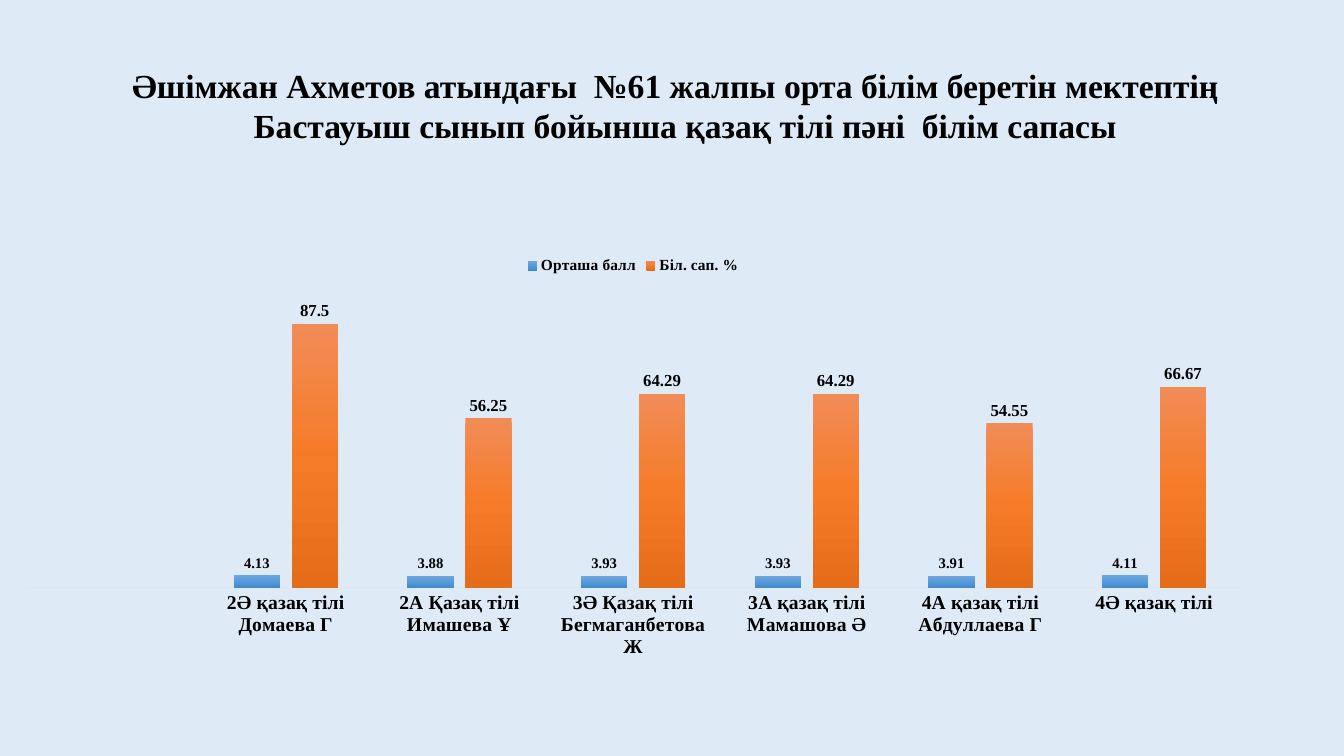
from pptx import Presentation
from pptx.chart.data import CategoryChartData
from pptx.dml.color import RGBColor
from pptx.enum.chart import XL_CHART_TYPE, XL_LABEL_POSITION, XL_LEGEND_POSITION, XL_TICK_MARK
from pptx.enum.text import MSO_ANCHOR, MSO_AUTO_SIZE, PP_ALIGN
from pptx.oxml import parse_xml
from pptx.oxml.ns import nsdecls, qn
from pptx.util import Inches, Pt

CLUSTERED = XL_CHART_TYPE.COLUMN_CLUSTERED
OUTSIDE_END = XL_LABEL_POSITION.OUTSIDE_END
LEGEND_TOP = XL_LEGEND_POSITION.TOP
NO_TICK = XL_TICK_MARK.NONE
LEFT, CENTER = PP_ALIGN.LEFT, PP_ALIGN.CENTER
TITLE_ONLY = 5

TITLE_LINES = [
    ("Әшімжан Ахметов атындағы  №61 жалпы орта білім беретін мектептің", LEFT),
    ("Бастауыш сынып бойынша қазақ тілі пәні  білім сапасы", CENTER),
]
CLASSES = ["", "2Ә қазақ тілі Домаева Г", "2А Қазақ тілі Имашева Ұ",
           "3Ә Қазақ тілі Бегмаганбетова Ж", "3А қазақ тілі Мамашова Ә",
           "4А қазақ тілі Абдуллаева Г", "4Ә қазақ тілі"]
# Name, values, gradient from top to bottom, label size
SERIES = [
    ("Орташа балл", [None, 4.13, 3.88, 3.93, 3.93, 3.91, 4.11],
     ["71A6DB", "559BDB", "448ACA"], 10.5),
    ("Біл. сап. %", [None, 87.5, 56.25, 64.29, 64.29, 54.55, 66.67],
     ["F18C57", "F67B28", "E56C19"], 12),
]


def color(hex_string):
    return RGBColor.from_string(hex_string)


class SlideBuilder:
    text_font = "Times New Roman"
    text_color = "000000"
    background = "DEEBF7"
    axis_line = "E0E5EB"

    def __init__(self, presentation):
        self.slide = presentation.slides.add_slide(presentation.slide_layouts[TITLE_ONLY])
        fill = self.slide.background.fill
        fill.solid()
        fill.fore_color.rgb = color(self.background)

    def style_font(self, font, size):
        font.name = self.text_font
        font.size = Pt(size)
        font.bold = True
        font.color.rgb = color(self.text_color)

    def title(self, lines, left, top, width, height):
        shape = self.slide.shapes.title
        shape.left, shape.top = Inches(left), Inches(top)
        shape.width, shape.height = Inches(width), Inches(height)
        frame = shape.text_frame
        frame.word_wrap = True
        frame.auto_size = MSO_AUTO_SIZE.NONE
        frame.vertical_anchor = MSO_ANCHOR.TOP
        frame.text = "\n".join(text for text, _ in lines)
        for paragraph, (_, alignment) in zip(frame.paragraphs, lines):
            paragraph.alignment = alignment
            paragraph.line_spacing = 1.0
            for run in paragraph.runs:
                self.style_font(run.font, 24)

    def gradient(self, series, colors):
        series.format.fill.gradient()
        step = 100000 // (len(colors) - 1)
        stops = "".join(
            f'<a:gs pos="{index * step}"><a:srgbClr val="{value}"/></a:gs>'
            for index, value in enumerate(colors))
        properties = series._element.spPr
        properties.replace(properties.find(qn("a:gradFill")), parse_xml(
            f'<a:gradFill {nsdecls("a")} rotWithShape="1"><a:gsLst>{stops}</a:gsLst>'
            '<a:lin ang="5400000" scaled="0"/></a:gradFill>'))

    def column_chart(self, categories, series_rows, left, top, width, height):
        data = CategoryChartData()
        data.categories = categories
        for name, values, _, _ in series_rows:
            data.add_series(name, values)
        chart = self.slide.shapes.add_chart(
            CLUSTERED, Inches(left), Inches(top), Inches(width), Inches(height), data).chart
        chart.has_title = False
        chart.font.name = "Calibri"
        chart.font.size = Pt(10)
        chart.font.color.rgb = color(self.text_color)

        # Legend
        chart.has_legend = True
        chart.legend.position = LEGEND_TOP
        chart.legend.include_in_layout = False
        self.style_font(chart.legend.font, 11)

        # Axes
        category_axis = chart.category_axis
        category_axis.major_tick_mark = NO_TICK
        category_axis.format.line.color.rgb = color(self.axis_line)
        category_axis.format.line.width = Pt(0.75)
        self.style_font(category_axis.tick_labels.font, 14)
        value_axis = chart.value_axis
        value_axis.minimum_scale, value_axis.maximum_scale = 0, 100
        value_axis.has_major_gridlines = False
        value_axis.visible = False

        # Columns and their labels
        plot = chart.plots[0]
        plot.vary_by_categories = False
        plot.gap_width, plot.overlap = 150, -25
        for series, (_, _, colors, label_size) in zip(plot.series, series_rows):
            self.gradient(series, colors)
            labels = series.data_labels
            labels.show_value = True
            labels.position = OUTSIDE_END
            self.style_font(labels.font, label_size)


def main():
    presentation = Presentation()
    presentation.slide_width, presentation.slide_height = Inches(13.33), Inches(7.5)
    builder = SlideBuilder(presentation)
    builder.title(TITLE_LINES, 1.21, 0.59, 11.17, 0.91)
    builder.column_chart(CLASSES, SERIES, 0, 2.44, 12.56, 4.17)
    presentation.save("out.pptx")


if __name__ == "__main__":
    main()
